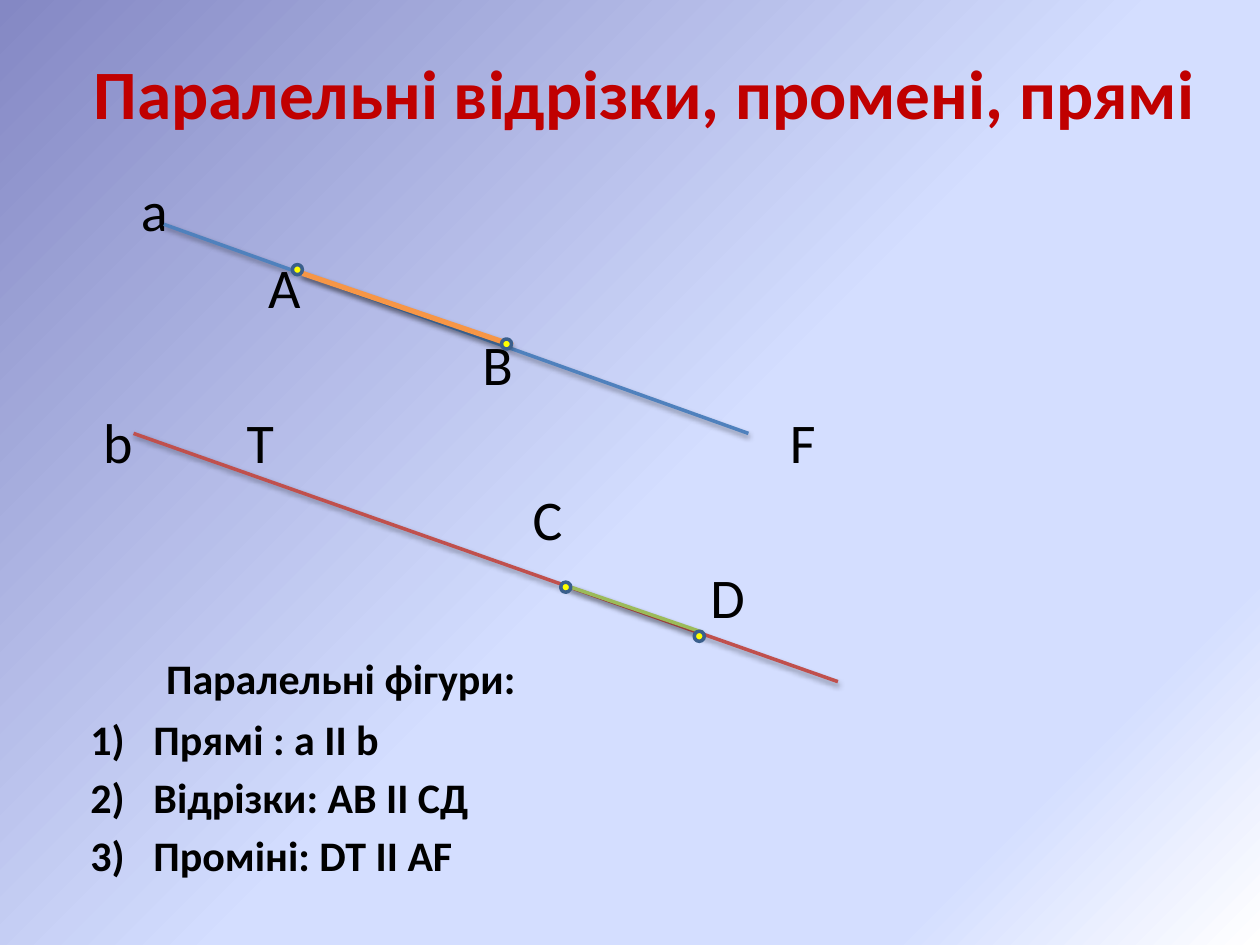
from lxml import etree
from pptx import Presentation
from pptx.dml.color import RGBColor
from pptx.enum.shapes import MSO_CONNECTOR as Connector, MSO_SHAPE as Shape
from pptx.enum.text import MSO_ANCHOR as Anchor, PP_ALIGN as Align
from pptx.oxml.ns import qn
from pptx.util import Inches, Pt

FONT = "Calibri"
BLACK = RGBColor(0x00, 0x00, 0x00)
TITLE_RED = RGBColor(0xC0, 0x00, 0x00)
LINE_BLUE = RGBColor(0x4F, 0x81, 0xBD)
LINE_RED = RGBColor(0xC0, 0x50, 0x4D)
SEGMENT_ORANGE = RGBColor(0xF7, 0x96, 0x46)
SEGMENT_GREEN = RGBColor(0x9B, 0xBB, 0x59)
POINT_YELLOW = RGBColor(0xFF, 0xFF, 0x00)
POINT_EDGE = RGBColor(0x3A, 0x5F, 0x8C)
BACKGROUND_STOPS = [
    (0, RGBColor(0x84, 0x88, 0xC4)),
    (53, RGBColor(0xD4, 0xDE, 0xFF)),
    (83, RGBColor(0xD4, 0xDE, 0xFF)),
    (100, RGBColor(0xFF, 0xFF, 0xFF)),
]

# Each row of letters: (distance from the text edge, letter)
LABEL_ROWS = [
    [(0.4, "а")],
    [(1.41, "А")],
    [(3.11, "В")],
    [(0.1, "b"), (1.24, "T"), (5.55, "F")],
    [(3.51, "C")],
    [(4.92, "D")],
]
HEADING = "Паралельні фігури:"
FIGURES = ["Прямі : а ІІ b", "Відрізки: АВ ІІ СД", "Проміні: DT II AF"]

# Start, end, colour, width in points
STROKES = [
    ((1.3, 1.78), (5.94, 3.44), LINE_BLUE, 2),
    ((2.4, 2.17), (4.07, 2.74), SEGMENT_ORANGE, 3),
    ((1.06, 3.44), (6.65, 5.41), LINE_RED, 2),
    ((4.53, 4.66), (5.58, 5.02), SEGMENT_GREEN, 2),
]
# Centres of the points A, B, C, D
POINTS = [(2.36, 2.14), (4.02, 2.73), (4.49, 4.66), (5.55, 5.05)]
POINT_SIZE = 0.08


def add_child(parent, tag, **attributes):
    return etree.SubElement(parent, qn(tag), {k: str(v) for k, v in attributes.items()})


def paint_background(page):
    fill = page.background.fill
    fill.gradient()
    fill.gradient_angle = 315
    stops = page.element.find(".//" + qn("a:gsLst"))
    for stop in list(stops):
        stops.remove(stop)
    for percent, colour in BACKGROUND_STOPS:
        stop = add_child(stops, "a:gs", pos=percent * 1000)
        add_child(stop, "a:srgbClr", val=colour)


def add_text_box(page, box, anchor):
    frame = page.shapes.add_textbox(*map(Inches, box)).text_frame
    frame.word_wrap = True
    frame.vertical_anchor = anchor
    return frame


def write(para, text, size, colour=BLACK, bold=False, before=0):
    para.text = text
    para.space_before = Pt(before)
    font = para.font
    font.name, font.size, font.bold = FONT, Pt(size), bold
    font.color.rgb = colour


def set_tabs(para, positions):
    tabs = etree.Element(qn("a:tabLst"))
    for position in positions:
        add_child(tabs, "a:tab", pos=Inches(position), algn="l")
    # Tab stops stand before the default run properties
    para.font._element.addprevious(tabs)


def set_number(para):
    properties = para._p.get_or_add_pPr()
    properties.set("marL", str(Inches(0.5)))
    properties.set("indent", str(Inches(-0.5)))
    number = etree.Element(qn("a:buAutoNum"), type="arabicParenR")
    para.font._element.addprevious(number)


def add_title(page, box):
    para = add_text_box(page, box, Anchor.MIDDLE).paragraphs[0]
    write(para, "Паралельні відрізки, промені, прямі", 39.6, TITLE_RED, True)
    para.alignment = Align.CENTER


def add_body(page, box):
    frame = add_text_box(page, box, Anchor.TOP)
    frame.margin_top = Inches(0.08)
    # Letters of the drawing
    for index, row in enumerate(LABEL_ROWS):
        para = frame.add_paragraph() if index else frame.paragraphs[0]
        write(para, "".join("\t" + letter for _, letter in row), 32,
              before=5.8 if index else 0)
        set_tabs(para, [position for position, _ in row])
    # Numbered list of parallel figures
    para = frame.add_paragraph()
    write(para, "\t" + HEADING, 24, bold=True, before=13.4)
    set_tabs(para, [0.6])
    for index, figure in enumerate(FIGURES):
        para = frame.add_paragraph()
        write(para, figure, 24, bold=True, before=4.2 if index else 6)
        set_number(para)


def add_stroke(page, start, end, colour, width):
    line = page.shapes.add_connector(Connector.STRAIGHT, *map(Inches, start + end))
    line.line.color.rgb = colour
    line.line.width = Pt(width)
    effects = add_child(line._element.spPr, "a:effectLst")
    shadow = add_child(effects, "a:outerShdw", blurRad=Pt(3.1), dist=Pt(1.6),
                       dir=90 * 60000, rotWithShape=0)
    add_child(add_child(shadow, "a:srgbClr", val=BLACK), "a:alpha", val=38000)


def add_point(page, x, y):
    corner = (x - POINT_SIZE / 2, y - POINT_SIZE / 2)
    point = page.shapes.add_shape(
        Shape.OVAL, *map(Inches, corner + (POINT_SIZE, POINT_SIZE)))
    point.shadow.inherit = False
    point.fill.solid()
    point.fill.fore_color.rgb = POINT_YELLOW
    point.line.color.rgb = POINT_EDGE
    point.line.width = Pt(2)


def add_drawing(page):
    for stroke in STROKES:
        add_stroke(page, *stroke)
    for centre in POINTS:
        add_point(page, *centre)


def main():
    deck = Presentation()
    deck.slide_width, deck.slide_height = Inches(10), Inches(7.5)
    page = deck.slides.add_slide(deck.slide_layouts[6])
    paint_background(page)
    add_title(page, (0.35, 0.3, 9.53, 0.85))
    add_body(page, (0.62, 1.31, 9, 5.98))
    add_drawing(page)
    deck.save("out.pptx")


if __name__ == "__main__":
    main()
